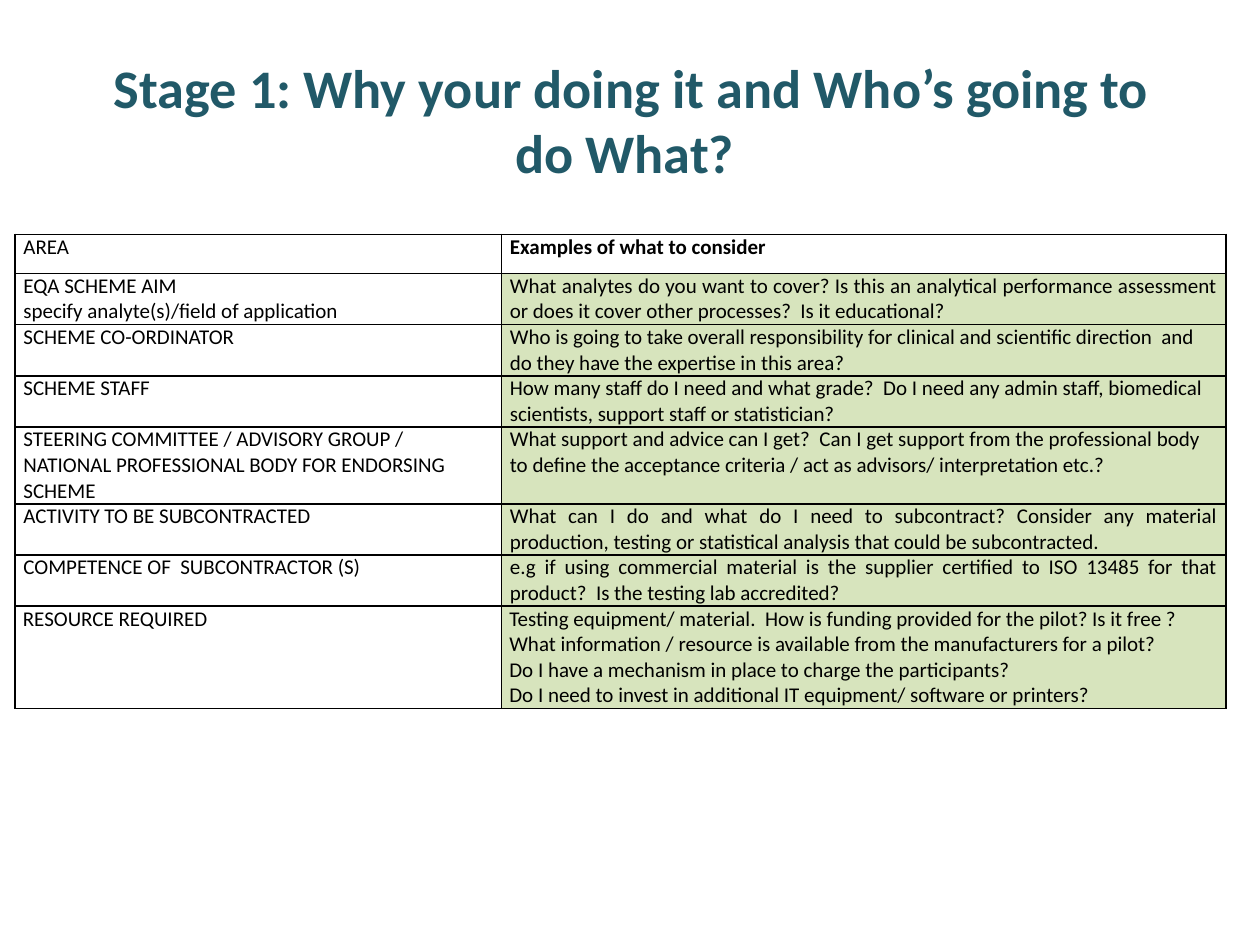
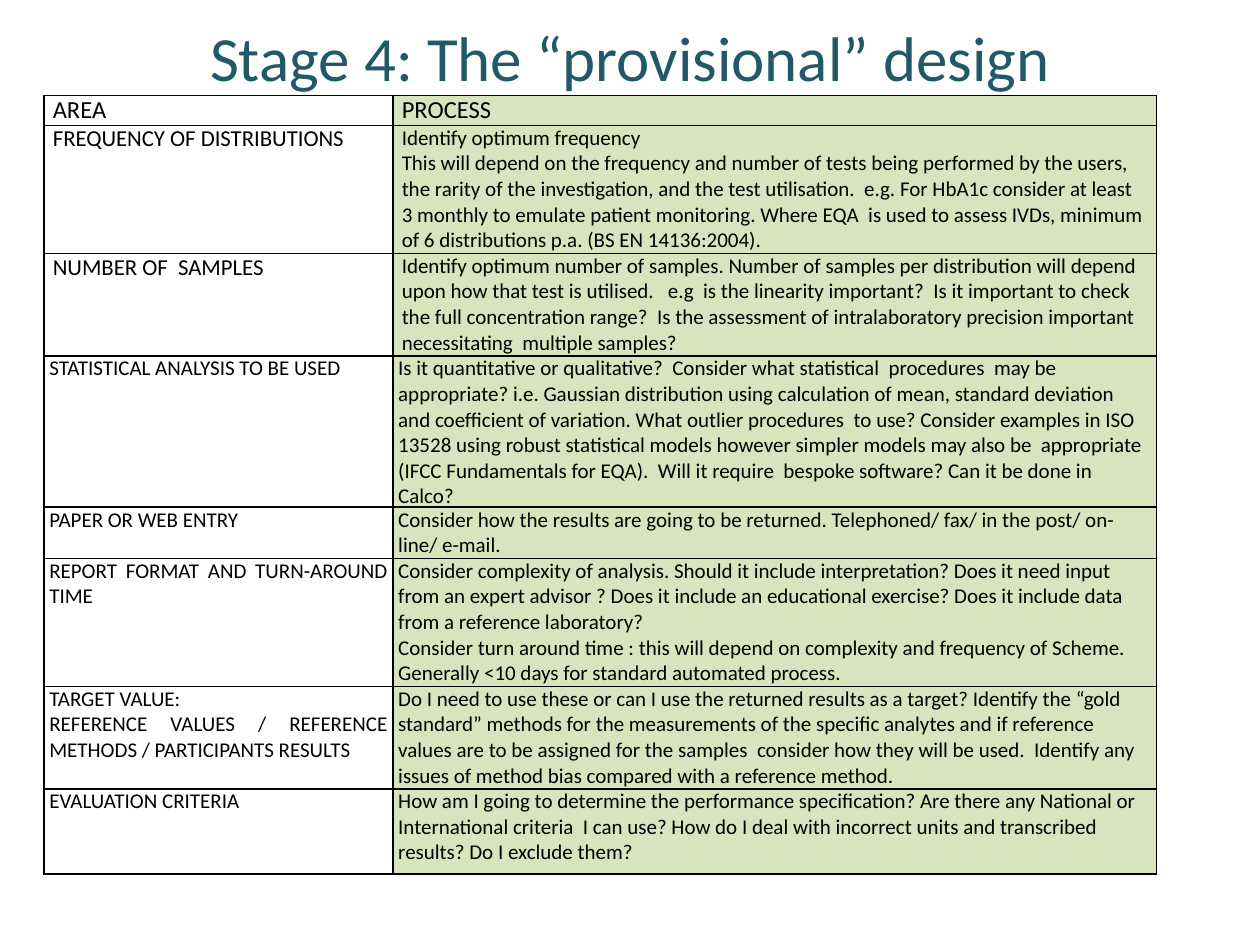
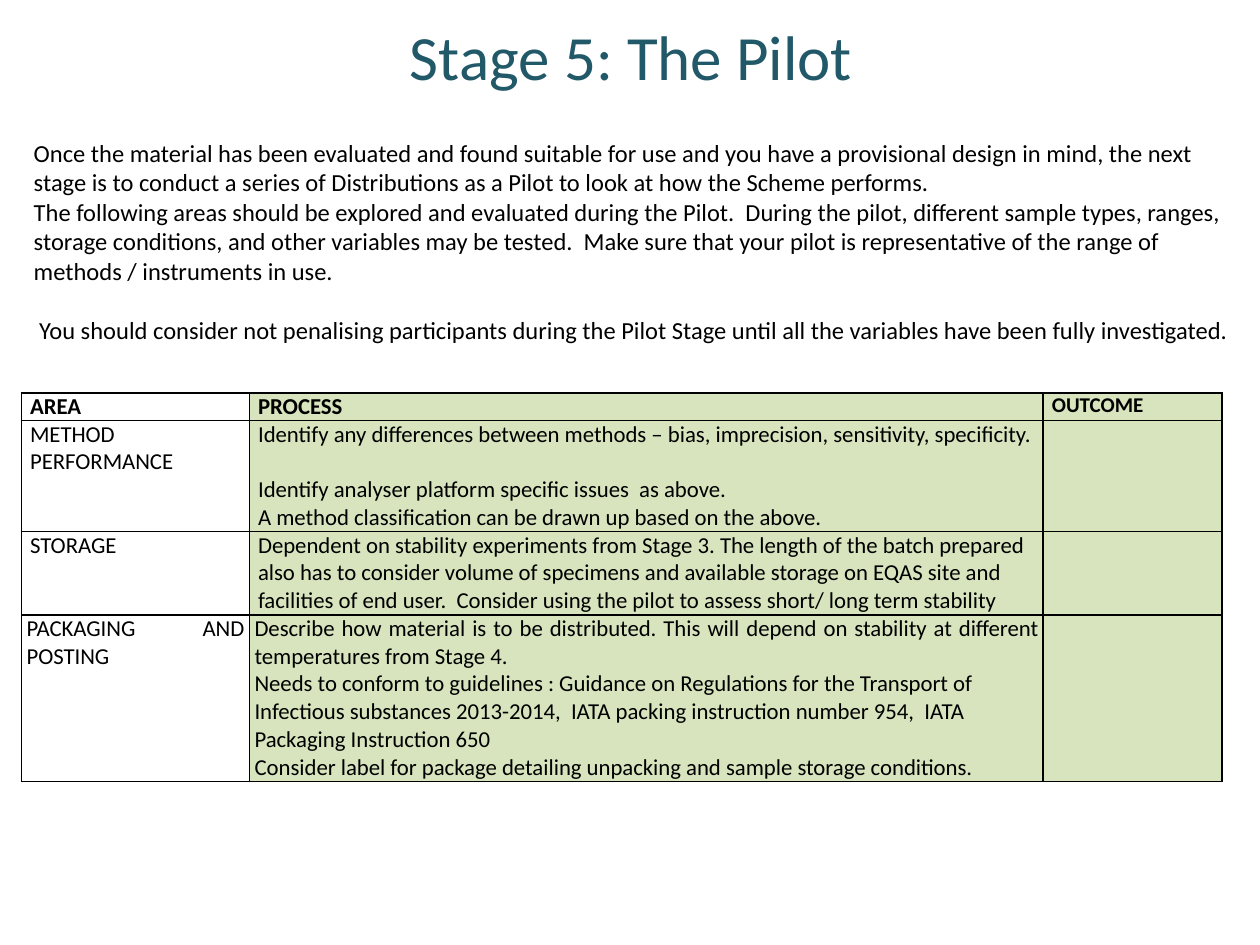
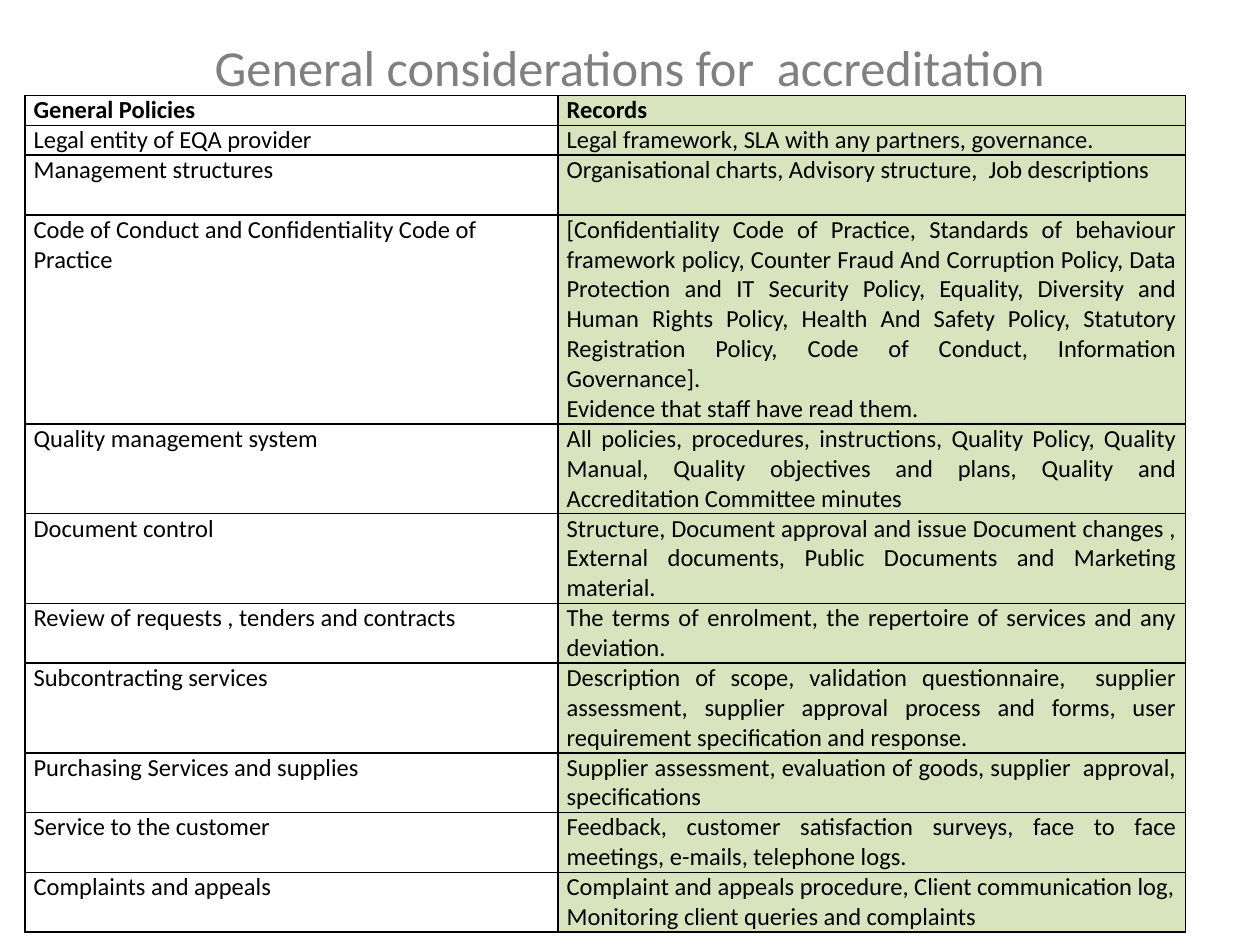
from dataclasses import dataclass
from itertools import cycle

from lxml import etree
from pptx import Presentation
from pptx.dml.color import RGBColor
from pptx.enum.text import MSO_ANCHOR, MSO_AUTO_SIZE, PP_ALIGN
from pptx.oxml.ns import qn
from pptx.util import Pt

MIDDLE = MSO_ANCHOR.MIDDLE
GROW = MSO_AUTO_SIZE.SHAPE_TO_FIT_TEXT
ALIGN = {"l": PP_ALIGN.LEFT, "c": PP_ALIGN.CENTER, "j": PP_ALIGN.JUSTIFY}


@dataclass(frozen=True)
class Theme:
    font: str = "Calibri"
    ink: str = "000000"
    teal: str = "215968"
    grey: str = "808080"
    green: str = "D7E4BD"
    bold_title: float = 31
    title: float = 36
    small_title: float = 28.8
    large: float = 14
    medium: float = 13
    small: float = 12
    line_height: float = 1.22
    border: float = 1


theme = Theme()


def write(frame, text, size, color=theme.ink, bold=False, align="l", gap_before=None):
    frame.word_wrap = True
    for index, (line, code) in enumerate(zip(text.split("\n"), cycle(align))):
        paragraph = frame.paragraphs[0] if index == 0 else frame.add_paragraph()
        paragraph.alignment = ALIGN[code]
        if index == gap_before:
            paragraph.space_before = Pt(size * theme.line_height)
        if line:
            run = paragraph.add_run()
            run.text = line
            run.font.name = theme.font
            run.font.size = Pt(size)
            run.font.bold = bold
            run.font.color.rgb = RGBColor.from_string(color)


def add_grid(slide, left, top, widths, rows, size, sizes={}, bold=(), gaps={},
             wide=5, narrow=3, narrow_from=99, plain_header=False):
    heights = [lines * size * theme.line_height for lines, *_ in rows]
    grid = slide.shapes.add_table(len(rows), len(widths), Pt(left), Pt(top),
                                  Pt(sum(widths)), Pt(sum(heights))).table
    grid.first_row = grid.horz_banding = False
    for column, width in zip(grid.columns, widths):
        column.width = Pt(width)
    for r, (_, aligns, *texts) in enumerate(rows):
        grid.rows[r].height = Pt(heights[r])
        for c, (align, text) in enumerate(zip(aligns.split(), texts)):
            cell = grid.cell(r, c)
            cell.margin_left = cell.margin_right = Pt(narrow if r >= narrow_from else wide)
            cell.margin_top = cell.margin_bottom = 0
            for side in ("lnL", "lnR", "lnT", "lnB"):
                edge = etree.SubElement(cell._tc.get_or_add_tcPr(), qn(f"a:{side}"),
                                        w=str(Pt(theme.border)))
                fill = etree.SubElement(edge, qn("a:solidFill"))
                etree.SubElement(fill, qn("a:srgbClr"), val=theme.ink)
            if c == 0 or (r == 0 and plain_header):
                cell.fill.background()
            else:
                cell.fill.solid()
                cell.fill.fore_color.rgb = RGBColor.from_string(theme.green)
            write(cell.text_frame, text, sizes.get((r, c), size), align=align,
                  bold=(r, c) in bold, gap_before=gaps.get((r, c)))


prs = Presentation()
prs.slide_width, prs.slide_height = Pt(720), Pt(540)

titles = [
    (" Stage 1: Why your doing it and Who’s going to do What?",
     (33, 15, 648, 106.5), theme.bold_title, theme.teal, True),
    ("Stage 4: The “provisional” design", (36, 21.6, 648, 21.6), theme.title, theme.teal, False),
    ("Stage 5: The Pilot", (36.7, 9.4, 648, 44), theme.title, theme.teal, False),
    ("General considerations for  accreditation",
     (36, 21.6, 648, 33), theme.small_title, theme.grey, False),
]
slides = []
for title, box, size, color, bold in titles:
    slide = prs.slides.add_slide(prs.slide_layouts[6])
    heading = slide.shapes.add_textbox(*map(Pt, box)).text_frame
    heading.vertical_anchor = MIDDLE
    write(heading, title, size, color=color, bold=bold, align="c")
    slides.append(slide)
aims, design, pilot, accreditation = slides

aims_rows = [
    (1.52, "j j", "AREA", "Examples of what to consider"),
    (2, "j j", "EQA SCHEME AIM\nspecify analyte(s)/field of application",
     "What analytes do you want to cover? Is this an analytical performance assessment or does it "
     "cover other processes?  Is it educational? "),
    (2, "j l", "SCHEME CO-ORDINATOR",
     "Who is going to take overall responsibility for clinical and scientific direction  and do "
     "they have the expertise in this area?"),
    (2, "j l", "SCHEME STAFF",
     "How many staff do I need and what grade?  Do I need any admin staff, biomedical scientists, "
     "support staff or statistician?"),
    (3, "l l",
     "STEERING COMMITTEE / ADVISORY GROUP / NATIONAL PROFESSIONAL BODY FOR ENDORSING SCHEME",
     "What support and advice can I get?  Can I get support from the professional body to define "
     "the acceptance criteria / act as advisors/ interpretation etc.?"),
    (2, "j j", "ACTIVITY TO BE SUBCONTRACTED",
     "What can I do and what do I need to subcontract? Consider any material production, testing "
     "or statistical analysis that could be subcontracted."),
    (2, "j j", "COMPETENCE OF  SUBCONTRACTOR (S)",
     "e.g if using commercial material is the supplier certified to ISO 13485 for that product?  "
     "Is the testing lab accredited? "),
    (4, "l l", "RESOURCE REQUIRED",
     "Testing equipment/ material.  How is funding provided for the pilot? Is it free ?\n"
     "What information / resource is available from the manufacturers for a pilot?\n"
     "Do I have a mechanism in place to charge the participants?\n"
     "Do I need to invest in additional IT equipment/ software or printers?"),
]
add_grid(aims, 8.6, 134, (278, 414), aims_rows, theme.small, bold={(0, 1)},
         wide=4.8, narrow=4.5, narrow_from=7, plain_header=True)

design_rows = [
    (1.17, "l l", "AREA", "PROCESS"),
    (5, "j l", "FREQUENCY OF DISTRIBUTIONS",
     "Identify optimum frequency\n"
     "This will depend on the frequency and number of tests being performed by the users, the "
     "rarity of the investigation, and the test utilisation.  e.g. For HbA1c consider at least "
     "3 monthly to emulate patient monitoring. Where EQA  is used to assess IVDs, minimum of 6 "
     "distributions p.a. (BS EN 14136:2004)."),
    (4, "j l", "NUMBER OF  SAMPLES",
     "Identify optimum number of samples. Number of samples per distribution will depend upon how "
     "that test is utilised.   e.g  is the linearity important?  Is it important to check the full "
     "concentration range?  Is the assessment of intralaboratory precision important  "
     "necessitating  multiple samples?"),
    (5, "j l", "STATISTICAL ANALYSIS TO BE USED",
     "Is it quantitative or qualitative?  Consider what statistical  procedures  may be "
     "appropriate? i.e. Gaussian distribution using calculation of mean, standard deviation and "
     "coefficient of variation. What outlier procedures  to use? Consider examples in ISO 13528 "
     "using robust statistical models however simpler models may also be  appropriate  (IFCC "
     "Fundamentals for EQA).  Will it require  bespoke software? Can it be done in Calco?"),
    (2, "j l", "PAPER OR WEB ENTRY",
     "Consider how the results are going to be returned. Telephoned/ fax/ in the post/ on-line/ "
     "e-mail."),
    (5, "j l", "REPORT FORMAT AND TURN-AROUND TIME",
     "Consider complexity of analysis. Should it include interpretation? Does it need input from "
     "an expert advisor ? Does it include an educational exercise? Does it include data from a "
     "reference laboratory?\n"
     "Consider turn around time : this will depend on complexity and frequency of Scheme.  "
     "Generally <10 days for standard automated process."),
    (4, "j l", "TARGET VALUE:\nREFERENCE VALUES / REFERENCE METHODS / PARTICIPANTS RESULTS",
     "Do I need to use these or can I use the returned results as a target? Identify the “gold "
     "standard” methods for the measurements of the specific analytes and if reference values are "
     "to be assigned for the samples  consider how they will be used.  Identify any issues of "
     "method bias compared with a reference method."),
    (3.32, "j l", "EVALUATION CRITERIA",
     "How am I going to determine the performance specification? Are there any National or "
     "International criteria  I can use? How do I deal with incorrect units and transcribed "
     "results? Do I exclude them?"),
]
add_grid(design, 25.2, 54.5, (199.4, 436.4), design_rows, theme.small, narrow_from=3,
         sizes={(0, 0): theme.large, (0, 1): theme.large,
                (1, 0): theme.medium, (2, 0): theme.medium})

introduction = pilot.shapes.add_textbox(Pt(12.2), Pt(66.2), Pt(697.7), Pt(143.3)).text_frame
introduction.vertical_anchor = MIDDLE
introduction.auto_size = GROW
write(introduction,
      "Once the material has been evaluated and found suitable for use and you have a provisional "
      "design in mind, the next stage is to conduct a series of Distributions as a Pilot to look "
      "at how the Scheme performs.\n"
      "The following areas should be explored and evaluated during the Pilot.  During the pilot, "
      "different sample types, ranges, storage conditions, and other variables may be tested.  "
      "Make sure that your pilot is representative of the range of methods / instruments in use.\n"
      " You should consider not penalising participants during the Pilot Stage until all the "
      "variables have been fully investigated.",
      theme.large, gap_before=2)

pilot_rows = [
    (1, "j l l", "AREA ", "PROCESS", "OUTCOME"),
    (4, "j l l", "METHOD PERFORMANCE",
     "Identify any differences between methods – bias, imprecision, sensitivity, specificity.\n"
     "Identify analyser platform specific issues  as above.\n"
     "A method classification can be drawn up based on the above.", ""),
    (3, "j l l", "STORAGE",
     "Dependent on stability experiments from Stage 3. The length of the batch prepared also has "
     "to consider volume of specimens and available storage on EQAS site and facilities of end "
     "user.  Consider using the pilot to assess short/ long term stability", ""),
    (6, "j jlj l", "PACKAGING AND POSTING",
     "Describe how material is to be distributed. This will depend on stability at different "
     "temperatures from Stage 4. \n"
     "Needs to conform to guidelines : Guidance on Regulations for the Transport of Infectious "
     "substances 2013-2014,  IATA packing instruction number 954,  IATA Packaging Instruction 650\n"
     "Consider label for package detailing unpacking and sample storage conditions.", ""),
]
add_grid(pilot, 12.2, 224.5, (130.3, 453.6, 102.2), pilot_rows, theme.medium, narrow_from=3,
         sizes={(0, 2): theme.small}, bold={(0, 0), (0, 1), (0, 2)}, gaps={(1, 1): 1})

accreditation_rows = [
    (1, "j j", "General Policies", "Records"),
    (1, "l j", "Legal entity of EQA provider",
     "Legal framework, SLA with any partners, governance."),
    (2, "l j", "Management structures",
     "Organisational charts, Advisory structure,  Job descriptions "),
    (7, "l j", "Code of Conduct and Confidentiality Code of Practice",
     "[Confidentiality Code of Practice, Standards of behaviour framework policy, Counter Fraud "
     "And Corruption Policy, Data Protection and IT Security Policy, Equality, Diversity and Human "
     "Rights Policy, Health And Safety Policy, Statutory Registration Policy, Code of Conduct, "
     "Information Governance].\nEvidence that staff have read them."),
    (3, "l j", "Quality management system",
     "All policies, procedures, instructions, Quality Policy, Quality Manual, Quality objectives "
     "and plans, Quality and Accreditation Committee minutes"),
    (3, "l j", "Document control",
     "Structure, Document approval and issue Document changes , External documents, Public "
     "Documents and Marketing material."),
    (2, "l j", "Review of requests , tenders and contracts",
     "The terms of enrolment, the repertoire of services and any deviation."),
    (3, "l j", "Subcontracting services",
     "Description of scope, validation questionnaire,  supplier assessment, supplier approval "
     "process and forms, user requirement specification and response."),
    (2, "l j", "Purchasing Services and supplies",
     "Supplier assessment, evaluation of goods, supplier  approval, specifications"),
    (2, "l j", "Service to the customer",
     "Feedback, customer satisfaction surveys, face to face meetings, e-mails, telephone logs. "),
    (2, "l l", "Complaints and appeals",
     "Complaint and appeals procedure, Client communication log, Monitoring client queries and "
     "complaints"),
]
add_grid(accreditation, 14.2, 54.5, (304.6, 358.6), accreditation_rows, theme.large,
         bold={(0, 0), (0, 1)})

prs.save("out.pptx")
